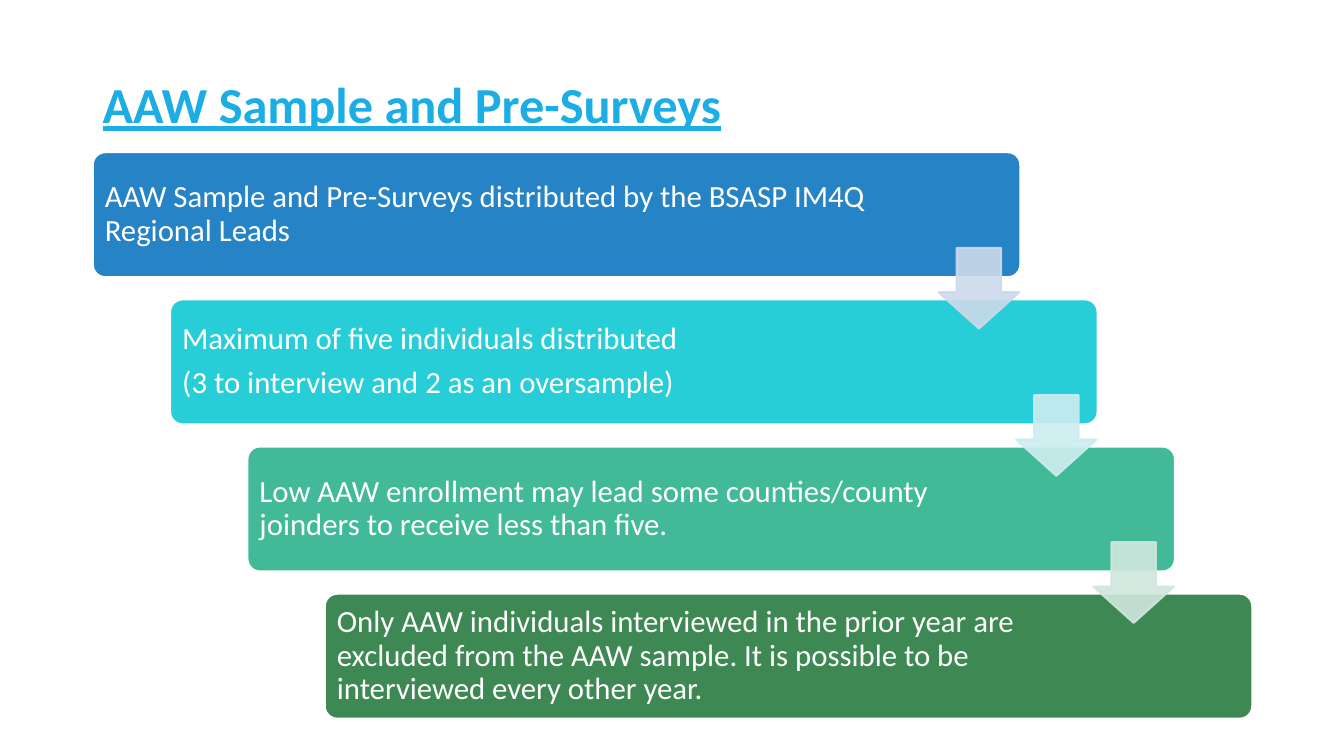
import pptx
import pptx.util
import pptx.dml.color
import pptx.enum.shapes
import pptx.enum.text
from lxml import etree
from pptx.dml.color import RGBColor
from pptx.util import Inches

WHITE = RGBColor(0xFF, 0xFF, 0xFF)
SKY = RGBColor(0x1C, 0xAD, 0xE4)
BLUE = RGBColor(0x26, 0x83, 0xC6)
TURQUOISE = RGBColor(0x27, 0xCE, 0xD7)
MINT = RGBColor(0x42, 0xBA, 0x97)
GREEN = RGBColor(0x3E, 0x88, 0x53)
PALE_BLUE = RGBColor(0xCD, 0xD9, 0xEA)
PALE_TURQUOISE = RGBColor(0xCD, 0xED, 0xF0)
PALE_MINT = RGBColor(0xCF, 0xE7, 0xDD)

STEPS = [
    (BLUE, 7.76, ["AAW Sample and Pre-Surveys distributed by the BSASP IM4Q Regional Leads"]),
    (TURQUOISE, 7.55, ["Maximum of five individuals distributed",
                       "(3 to interview and 2 as an oversample)"]),
    (MINT, 7.57, ["Low AAW enrollment may lead some counties/county joinders "
                  "to receive less than five."]),
    (GREEN, 7.55, ["Only AAW individuals interviewed in the prior year are excluded from "
                   "the AAW sample. It is possible to be interviewed every other year."]),
]
ARROW_COLORS = [PALE_BLUE, PALE_TURQUOISE, PALE_MINT]
LEFT, TOP = 0.92, 1.51
STEP_RIGHT, STEP_DOWN = 0.767, 1.46


class StaircaseSlide:
    """Draws the title, steps and arrows in one shared style."""

    font = "Calibri"

    def __init__(self, slide):
        self.slide = slide

    def text(self, lines, left, top, width, height, size, color, inset=0.09,
             space_after=0, heading=False):
        frame = self.slide.shapes.add_textbox(
            Inches(left), Inches(top), Inches(width), Inches(height)).text_frame
        frame.word_wrap = True
        frame.vertical_anchor = pptx.enum.text.MSO_ANCHOR.MIDDLE
        frame.margin_left = frame.margin_right = Inches(inset)
        frame.margin_top = frame.margin_bottom = Inches(inset)
        frame.text = "\n".join(lines)
        for paragraph in frame.paragraphs:
            paragraph.line_spacing = 0.9
            paragraph.space_after = pptx.util.Pt(space_after)
            for run in paragraph.runs:
                run.font.name = self.font
                run.font.size = pptx.util.Pt(size)
                run.font.color.rgb = color
                run.font.bold = heading
                run.font.underline = heading

    def shape(self, kind, left, top, width, height, adjustments, fill, line):
        drawn = self.slide.shapes.add_shape(
            kind, Inches(left), Inches(top), Inches(width), Inches(height))
        drawn.shadow.inherit = False
        for index, value in enumerate(adjustments):
            drawn.adjustments[index] = value
        drawn.fill.solid()
        drawn.fill.fore_color.rgb = fill
        drawn.line.color.rgb = line
        drawn.line.width = pptx.util.Pt(1.5)
        return drawn

    def step(self, left, top, color, text_width, lines):
        self.shape(pptx.enum.shapes.MSO_SHAPE.ROUNDED_RECTANGLE,
                   left, top, 9.2, 1.24, [0.1], color, WHITE)
        self.text(lines, left + 0.03, top + 0.04, text_width, 1.16, 22, WHITE,
                  space_after=8)

    def arrow(self, left, top, color):
        arrow = self.shape(pptx.enum.shapes.MSO_SHAPE.DOWN_ARROW,
                           left, top, 0.8, 0.8, [0.55, 0.45], color, color)
        namespace = pptx.oxml.ns.qn("a:srgbClr")
        for tint in arrow.element.spPr.iter(namespace):
            etree.SubElement(tint, pptx.oxml.ns.qn("a:alpha"), val="90000")


def main():
    presentation = pptx.Presentation()
    presentation.slide_width = Inches(13.33)
    presentation.slide_height = Inches(7.5)
    staircase = StaircaseSlide(
        presentation.slides.add_slide(presentation.slide_layouts[6]))

    staircase.text(["AAW Sample and Pre-Surveys"], LEFT, 0.61, 11.5, 0.9, 36, SKY,
                   inset=0.1, heading=True)
    for index, (color, text_width, lines) in enumerate(STEPS):
        staircase.step(LEFT + index * STEP_RIGHT, TOP + index * STEP_DOWN,
                       color, text_width, lines)
    for index, color in enumerate(ARROW_COLORS):
        staircase.arrow(LEFT + 8.39 + index * STEP_RIGHT,
                        TOP + 0.95 + index * STEP_DOWN, color)

    presentation.save("out.pptx")


if __name__ == "__main__":
    main()
